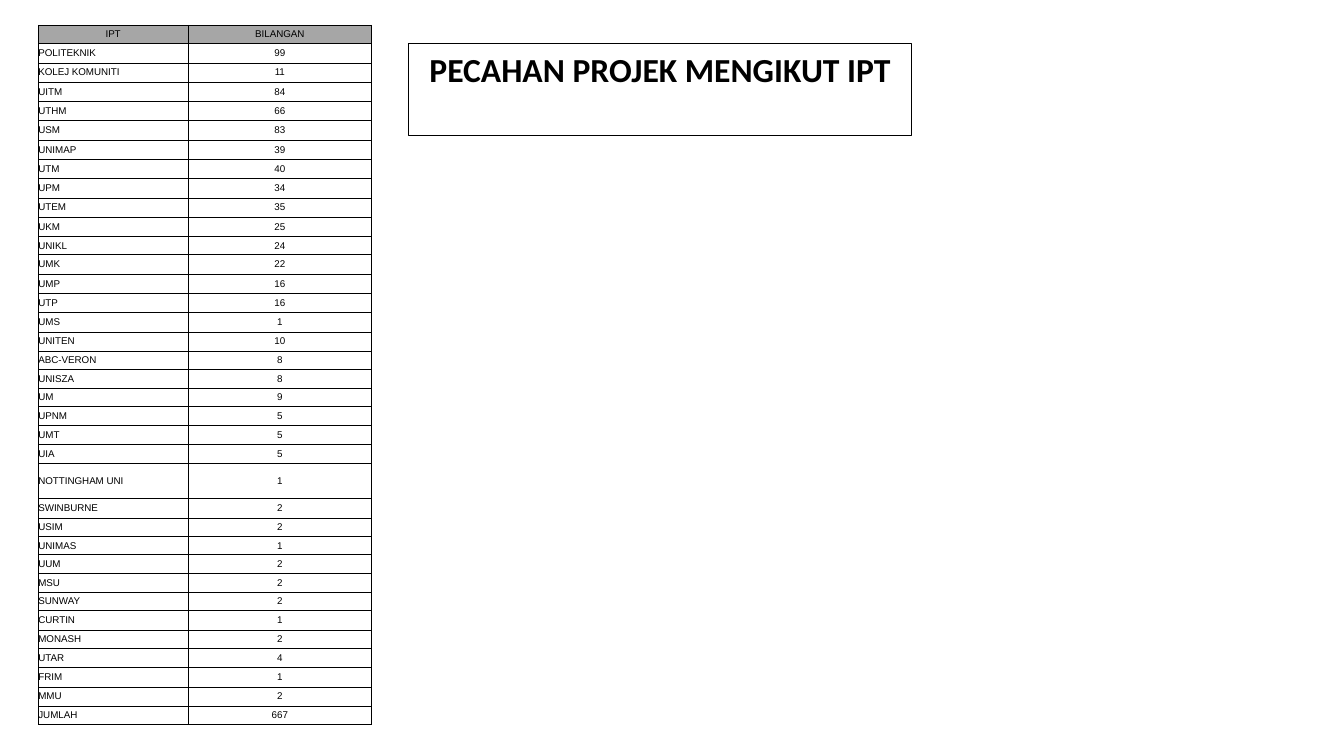
from lxml import etree
from pptx import Presentation
from pptx.dml.color import RGBColor
from pptx.enum import text
from pptx.oxml.ns import qn
from pptx.util import Pt

TITLE = "PECAHAN PROJEK MENGIKUT IPT"
HEADER = ("IPT", "BILANGAN")
COUNTS = [
    ("POLITEKNIK", 99), ("KOLEJ KOMUNITI", 11), ("UITM", 84), ("UTHM", 66),
    ("USM", 83), ("UNIMAP", 39), ("UTM", 40), ("UPM", 34), ("UTEM", 35),
    ("UKM", 25), ("UNIKL", 24), ("UMK", 22), ("UMP", 16), ("UTP", 16),
    ("UMS", 1), ("UNITEN", 10), ("ABC-VERON", 8), ("UNISZA", 8), ("UM", 9),
    ("UPNM", 5), ("UMT", 5), ("UIA", 5), ("NOTTINGHAM UNI", 1),
    ("SWINBURNE", 2), ("USIM", 2), ("UNIMAS", 1), ("UUM", 2), ("MSU", 2),
    ("SUNWAY", 2), ("CURTIN", 1), ("MONASH", 2), ("UTAR", 4), ("FRIM", 1),
    ("MMU", 2), ("JUMLAH", 667),
]
BLACK = RGBColor(0x00, 0x00, 0x00)
GREY = RGBColor(0xA6, 0xA6, 0xA6)

COLUMN_WIDTHS = (106.8, 131.4)
ROW_HEIGHT, LOW_ROW, TALL_ROW = 13.8, 13.1, 25.5
LOW_ROWS = {"IPT", "UNIKL", "ABC-VERON", "UNISZA", "UM", "UIA", "USIM", "UNIMAS",
            "UUM", "SUNWAY", "MONASH", "JUMLAH"}


def row_height(name):
    if name == "NOTTINGHAM UNI":
        return TALL_ROW
    return LOW_ROW if name in LOW_ROWS else ROW_HEIGHT


def add_borders(cell):
    tc_pr = cell._tc.get_or_add_tcPr()
    for i, side in enumerate(("lnL", "lnR", "lnT", "lnB")):
        ln = etree.Element(qn("a:" + side), w=str(Pt(0.5)))
        fill = etree.SubElement(ln, qn("a:solidFill"))
        etree.SubElement(fill, qn("a:srgbClr"), val=str(BLACK))
        tc_pr.insert(i, ln)


def style_text(p, font, size, align):
    p.alignment = align
    for r in p.runs:
        r.font.name = font
        r.font.size = Pt(size)
        r.font.color.rgb = BLACK


prs = Presentation()
prs.slide_width, prs.slide_height = Pt(960), Pt(540)
s = prs.slides.add_slide(prs.slide_layouts[5])

title = s.shapes.title
title.left, title.top, title.width, title.height = Pt(292), Pt(31), Pt(359), Pt(65.5)
title.line.color.rgb = BLACK
title.line.width = Pt(0.75)
tf = title.text_frame
tf.text = TITLE
tf.word_wrap = True
tf.auto_size = text.MSO_AUTO_SIZE.NONE
tf.vertical_anchor = text.MSO_ANCHOR.TOP
style_text(tf.paragraphs[0], "Calibri", 24, text.PP_ALIGN.CENTER)
tf.paragraphs[0].runs[0].font.bold = True

rows = [HEADER] + COUNTS
heights = [row_height(name) for name, _ in rows]
table = s.shapes.add_table(len(rows), len(HEADER), Pt(27.4), Pt(18),
                           Pt(sum(COLUMN_WIDTHS)), Pt(sum(heights))).table
table.horz_banding = table.first_row = False
for column, width in zip(table.columns, COLUMN_WIDTHS):
    column.width = Pt(width)

for i, values in enumerate(rows):
    table.rows[i].height = Pt(heights[i])
    for j, value in enumerate(values):
        cell = table.cell(i, j)
        cell.text = str(value)
        cell.margin_left = cell.margin_right = cell.margin_top = cell.margin_bottom = 0
        cell.vertical_anchor = text.MSO_ANCHOR.MIDDLE
        if i == 0:
            cell.fill.solid()
            cell.fill.fore_color.rgb = GREY
        else:
            cell.fill.background()
        add_borders(cell)
        centred = i == 0 or j == 1
        style_text(cell.text_frame.paragraphs[0], "Arial", 7,
                   text.PP_ALIGN.CENTER if centred else text.PP_ALIGN.LEFT)

prs.save("out.pptx")
